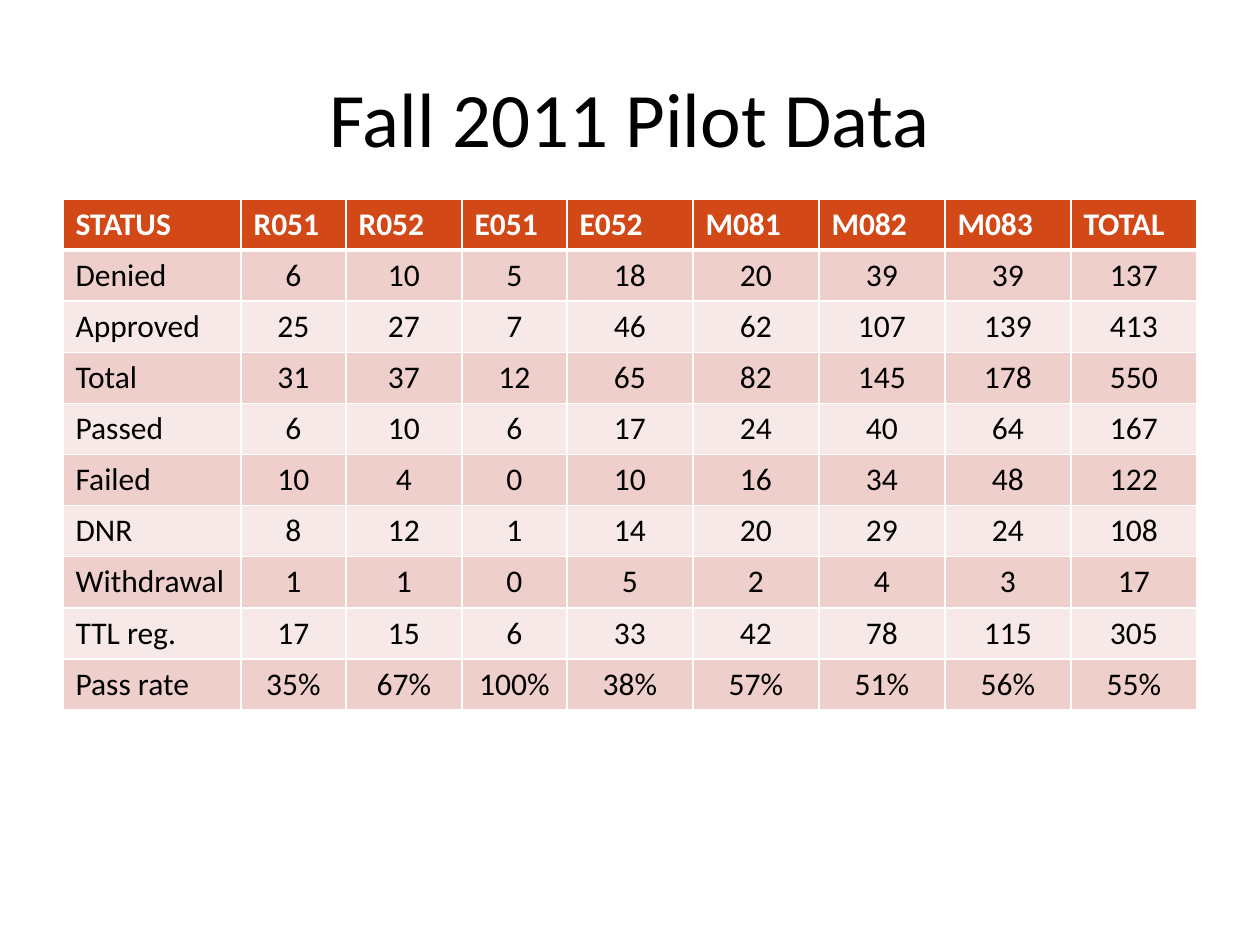
import dataclasses

import lxml.etree
import pptx
import pptx.dml.color
import pptx.enum.text
import pptx.oxml.ns
import pptx.util

ALIGN = pptx.enum.text.PP_ALIGN
ANCHOR = pptx.enum.text.MSO_ANCHOR


@dataclasses.dataclass(frozen=True)
class Theme:
    font: str = "Calibri"
    title_size: int = 44
    table_size: int = 18
    text: str = "000000"
    header_text: str = "FFFFFF"
    header_fill: str = "D34817"
    band_fills: tuple = ("EFCFCC", "F7E9E8")
    border: str = "FFFFFF"
    border_width: int = 1
    header_rule_width: int = 3


def px(length):
    """Turn slide pixels (126 to the inch) into EMU."""
    return pptx.util.Emu(round(length * 914400 / 126))


def rgb(color):
    return pptx.dml.color.RGBColor.from_string(color)


class SlideBuilder:
    def __init__(self, slide, theme):
        self.slide = slide
        self.theme = theme

    def set_font(self, paragraph, size, color, bold=False):
        font = paragraph.font
        font.name = self.theme.font
        font.size = pptx.util.Pt(size)
        font.bold = bold
        font.color.rgb = rgb(color)

    def add_title(self, text, left, top, width, height):
        title = self.slide.shapes.title
        title.left, title.top = px(left), px(top)
        title.width, title.height = px(width), px(height)
        title.text_frame.text = text
        title.text_frame.vertical_anchor = ANCHOR.MIDDLE
        paragraph = title.text_frame.paragraphs[0]
        paragraph.alignment = ALIGN.CENTER
        self.set_font(paragraph, self.theme.title_size, self.theme.text)

    def add_table(self, rows, left, top, column_widths, row_height):
        frame = self.slide.shapes.add_table(
            len(rows), len(column_widths), px(left), px(top),
            px(sum(column_widths)), px(row_height * len(rows)))
        table = frame.table
        for column, width in zip(table.columns, column_widths):
            column.width = px(width)
        for row_index, values in enumerate(rows):
            table.rows[row_index].height = px(row_height)
            for column_index, value in enumerate(values):
                self.fill_cell(table.cell(row_index, column_index), value,
                               row_index, column_index)

    def fill_cell(self, cell, value, row_index, column_index):
        theme = self.theme
        is_header = row_index == 0
        cell.text = value
        paragraph = cell.text_frame.paragraphs[0]
        is_label = is_header or column_index == 0
        paragraph.alignment = ALIGN.LEFT if is_label else ALIGN.CENTER
        self.set_font(paragraph, theme.table_size,
                      theme.header_text if is_header else theme.text, is_header)
        fill = theme.header_fill if is_header else theme.band_fills[(row_index - 1) % 2]
        cell.fill.solid()
        cell.fill.fore_color.rgb = rgb(fill)
        self.set_borders(cell, row_index)

    def set_borders(self, cell, row_index):
        # The heavy rule lies between the header and the first data row
        heavy_side = {0: "lnB", 1: "lnT"}.get(row_index)
        qn = pptx.oxml.ns.qn
        properties = cell._tc.get_or_add_tcPr()
        for position, side in enumerate(("lnL", "lnR", "lnT", "lnB")):
            width = (self.theme.header_rule_width if side == heavy_side
                     else self.theme.border_width)
            line = lxml.etree.Element(qn("a:" + side), w=str(pptx.util.Pt(width)))
            solid = lxml.etree.SubElement(line, qn("a:solidFill"))
            lxml.etree.SubElement(solid, qn("a:srgbClr"), val=self.theme.border)
            properties.insert(position, line)


PILOT_DATA = [
    ["STATUS", "R051", "R052", "E051", "E052", "M081", "M082", "M083", "TOTAL"],
    ["Denied", "6", "10", "5", "18", "20", "39", "39", "137"],
    ["Approved", "25", "27", "7", "46", "62", "107", "139", "413"],
    ["Total", "31", "37", "12", "65", "82", "145", "178", "550"],
    ["Passed", "6", "10", "6", "17", "24", "40", "64", "167"],
    ["Failed", "10", "4", "0", "10", "16", "34", "48", "122"],
    ["DNR", "8", "12", "1", "14", "20", "29", "24", "108"],
    ["Withdrawal", "1", "1", "0", "5", "2", "4", "3", "17"],
    ["TTL reg.", "17", "15", "6", "33", "42", "78", "115", "305"],
    ["Pass rate", "35%", "67%", "100%", "38%", "57%", "51%", "56%", "55%"],
]


def main():
    presentation = pptx.Presentation()
    presentation.slide_width, presentation.slide_height = px(1260), px(945)
    slide = presentation.slides.add_slide(presentation.slide_layouts[5])
    builder = SlideBuilder(slide, Theme())

    # Title
    builder.add_title("Fall 2011 Pilot Data", 63, 38, 1134, 158)

    # Results by course
    column_widths = [178, 105, 116, 105] + [126] * 5
    builder.add_table(PILOT_DATA, 63, 199, column_widths, 51)

    presentation.save("out.pptx")


if __name__ == "__main__":
    main()
